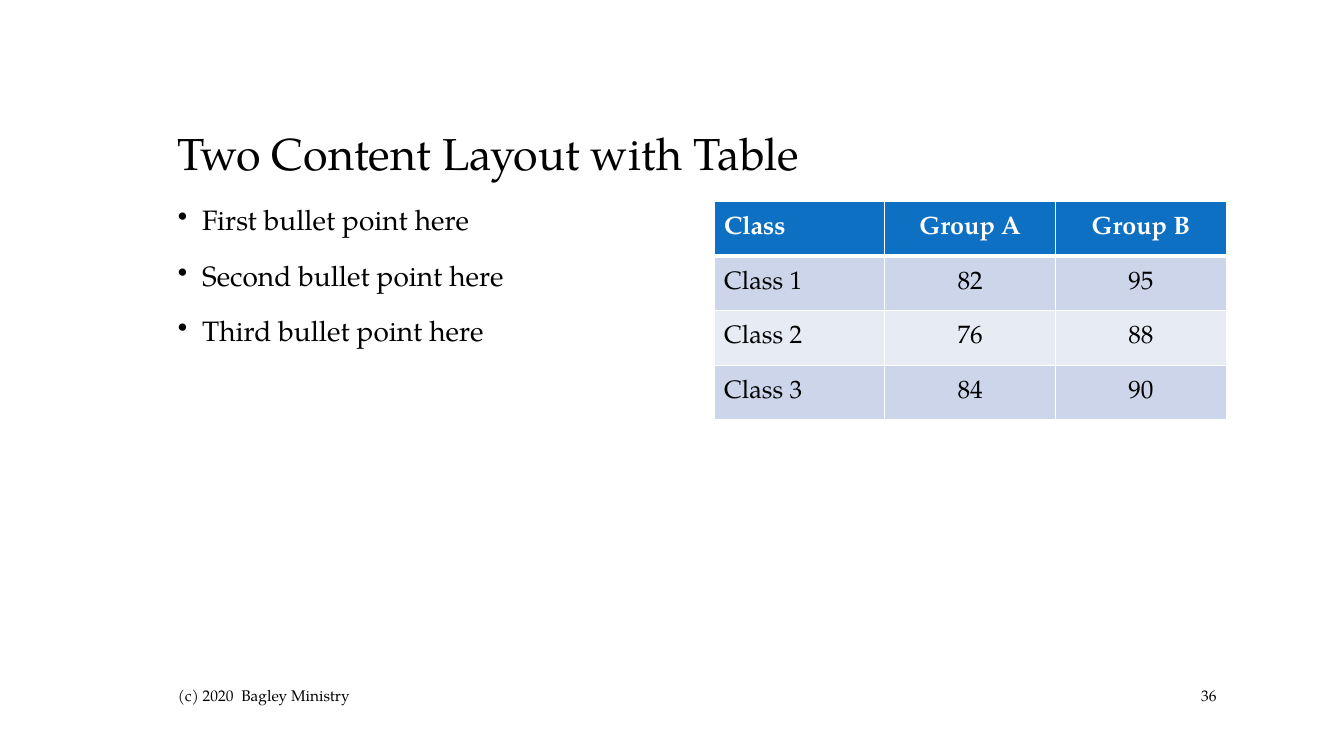
from lxml.etree import SubElement as Sub
from pptx import Presentation
from pptx.dml.color import RGBColor as Rgb
from pptx.enum.text import MSO_ANCHOR as Anchor, PP_ALIGN as Align
from pptx.oxml.ns import qn
from pptx.util import Inches, Pt

COLS, ROWS = 160, 90
FONT = "TeX Gyre Pagella"
HUES = {
    "text": "000000",
    "white": "FFFFFF",
    "head": "0E70C2",
    "odd": "CCD5E9",
    "even": "E7EBF4",
}


class Deck:
    def __init__(self):
        self.show = Presentation()
        self.show.slide_width = Inches(13.33)
        self.show.slide_height = Inches(7.5)
        self.slide = self.show.slides.add_slide(self.show.slide_layouts[6])

    def area(self, col, row, wide, high):
        """Turn grid columns and rows into slide lengths."""
        dx = self.show.slide_width / COLS
        dy = self.show.slide_height / ROWS
        return [round(n) for n in (col * dx, row * dy, wide * dx, high * dy)]

    def style(self, para, size, hue="text", bold=False, align=Align.LEFT):
        para.alignment = align
        font = para.font
        font.name, font.size, font.bold = FONT, Pt(size), bold
        font.color.rgb = Rgb.from_string(HUES[hue])

    def text(self, words, spot, size, anchor=Anchor.MIDDLE, align=Align.LEFT, lead=1.0):
        frame = self.slide.shapes.add_textbox(*self.area(*spot)).text_frame
        frame.word_wrap = True
        frame.vertical_anchor = anchor
        frame.text = words
        for para in frame.paragraphs:
            para.line_spacing = lead
            self.style(para, size, align=align)
        return frame

    def list(self, items, spot, size):
        frame = self.text("\n".join(items), spot, size, Anchor.TOP, lead=0.9)
        for i, para in enumerate(frame.paragraphs):
            props = para._p.get_or_add_pPr()
            props.set("marL", str(Inches(0.24)))
            props.set("indent", str(-Inches(0.24)))
            mark = Sub(props, qn("a:buChar"), char="•")
            props.find(qn("a:defRPr")).addprevious(mark)
            if i:
                para.space_before = Pt(18)

    def edge(self, cell, side, width):
        line = Sub(cell._tc.get_or_add_tcPr(), qn("a:ln" + side), w=str(Pt(width)))
        fill = Sub(line, qn("a:solidFill"))
        Sub(fill, qn("a:srgbClr"), val=HUES["white"])

    def table(self, data, spot, size):
        place = self.area(*spot)
        table = self.slide.shapes.add_table(len(data), len(data[0]), *place).table
        for r, row in enumerate(data):
            band = "odd" if r % 2 else "even"
            for c, words in enumerate(row):
                cell = table.cell(r, c)
                cell.text = words
                cell.vertical_anchor = Anchor.MIDDLE
                for side in "LRTB":
                    thick = (side, r) in (("B", 0), ("T", 1))
                    self.edge(cell, side, 3 if thick else 1)
                cell.fill.solid()
                cell.fill.fore_color.rgb = Rgb.from_string(HUES[band if r else "head"])
                self.style(
                    cell.text_frame.paragraphs[0],
                    size,
                    hue="text" if r else "white",
                    bold=r == 0,
                    align=Align.CENTER if c else Align.LEFT,
                )


def main():
    deck = Deck()
    deck.text("Two Content Layout with Table", (20, 7, 126, 15), 32, Anchor.BOTTOM, lead=0.9)
    points = [f"{nth} bullet point here" for nth in ("First", "Second", "Third")]
    deck.list(points, (20, 24, 61, 55), 20)
    scores = [
        ("Class", "Group A", "Group B"),
        ("Class 1", "82", "95"),
        ("Class 2", "76", "88"),
        ("Class 3", "84", "90"),
    ]
    deck.table(scores, (85, 24, 61, 26), 18)
    deck.text("(c) 2020  Bagley Ministry", (20, 81, 90, 3.6), 11)
    deck.text("36", (133, 81, 13, 3.6), 11, align=Align.RIGHT)
    deck.show.save("out.pptx")


if __name__ == "__main__":
    main()
